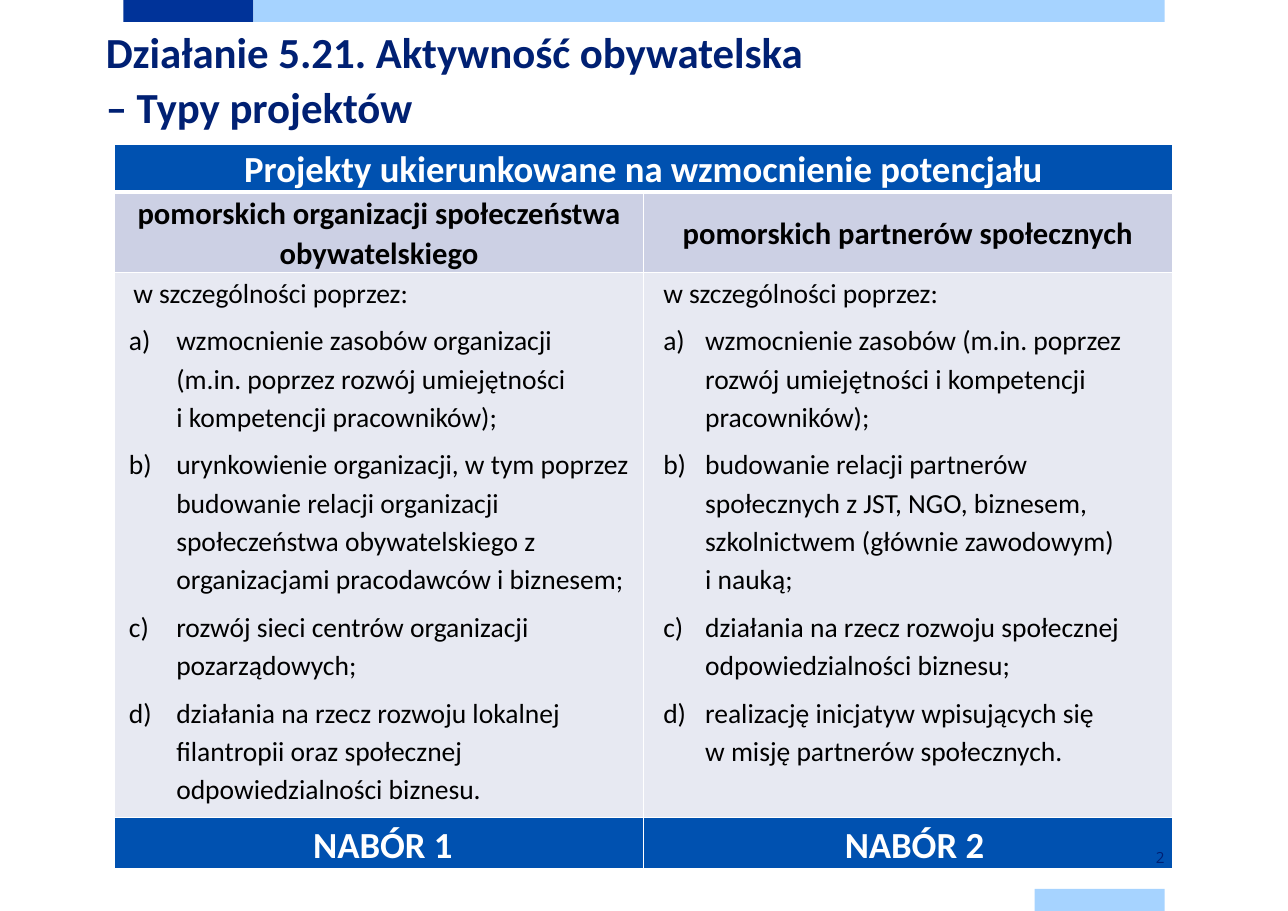
from lxml.etree import SubElement
from pptx import Presentation
from pptx.dml.color import RGBColor
from pptx.enum.shapes import MSO_SHAPE as Shape
from pptx.enum.text import MSO_ANCHOR as Anchor, MSO_AUTO_SIZE as AutoSize, PP_ALIGN as Align
from pptx.oxml.ns import qn
from pptx.util import Inches, Pt

NAVY = RGBColor(0x00, 0x20, 0x73)
DARK_BLUE = RGBColor(0x00, 0x33, 0x99)
BLUE = RGBColor(0x00, 0x51, 0xB0)
SKY = RGBColor(0xA6, 0xD3, 0xFF)
LAVENDER = RGBColor(0xCC, 0xD0, 0xE4)
PALE = RGBColor(0xE7, 0xE9, 0xF2)
WHITE = RGBColor(0xFF, 0xFF, 0xFF)
BLACK = RGBColor(0x00, 0x00, 0x00)

INTRO = "w szczególności poprzez:"
ORGANIZATION_ACTIONS = [
    "wzmocnienie zasobów organizacji\n(m.in. poprzez rozwój umiejętności\ni kompetencji pracowników);",
    "urynkowienie organizacji, w tym poprzez budowanie relacji organizacji społeczeństwa "
    "obywatelskiego z organizacjami pracodawców i biznesem;",
    "rozwój sieci centrów organizacji pozarządowych;",
    "działania na rzecz rozwoju lokalnej filantropii oraz społecznej odpowiedzialności biznesu.",
]
PARTNER_ACTIONS = [
    "wzmocnienie zasobów (m.in. poprzez rozwój umiejętności i kompetencji pracowników);",
    "budowanie relacji partnerów społecznych z JST, NGO, biznesem, "
    "szkolnictwem (głównie zawodowym)\ni nauką;",
    "działania na rzecz rozwoju społecznej odpowiedzialności biznesu;",
    "realizację inicjatyw wpisujących się\nw misję partnerów społecznych.",
]


class Page:
    font = "Calibri"

    def __init__(self, deck):
        self.slide = deck.slides.add_slide(deck.slide_layouts[5])

    def fill_text(self, para, text, size, color, bold=False, font=None):
        para.text = text
        for span in para.runs:
            span.font.name = font or self.font
            span.font.size = Pt(size)
            span.font.bold = bold
            span.font.color.rgb = color

    def bar(self, left, top, width, color):
        bar = self.slide.shapes.add_shape(
            Shape.RECTANGLE, Inches(left), Inches(top), Inches(width), Inches(0.2))
        bar.shadow.inherit = False
        bar.fill.solid()
        bar.fill.fore_color.rgb = color
        bar.line.fill.background()

    def title(self, text):
        title = self.slide.shapes.title
        title.left, title.top = Inches(0.96), Inches(0.2)
        title.width, title.height = Inches(10.24), Inches(1.16)
        frame = title.text_frame
        frame.auto_size = AutoSize.NONE
        frame.vertical_anchor = Anchor.TOP
        frame.margin_left = frame.margin_right = frame.margin_top = frame.margin_bottom = 0
        para = frame.paragraphs[0]
        para.alignment = Align.LEFT
        para.line_spacing = Pt(36)
        self.fill_text(para, text, 28, NAVY, True)

    def table(self, left, top, widths, heights):
        table = self.slide.shapes.add_table(
            len(heights), len(widths), Inches(left), Inches(top),
            Inches(sum(widths)), Inches(sum(heights))).table
        for column, width in zip(table.columns, widths):
            column.width = Inches(width)
        for row, height in zip(table.rows, heights):
            row.height = Inches(height)
        return table

    def style_cell(self, cell, fill, anchor=Anchor.MIDDLE, top_line=1, bottom_line=1):
        cell.margin_left = cell.margin_right = Inches(0.07)
        cell.margin_top = cell.margin_bottom = 0
        cell.vertical_anchor = anchor
        properties = cell._tc.get_or_add_tcPr()
        for side, width in (("L", 1), ("R", 1), ("T", top_line), ("B", bottom_line)):
            line = SubElement(properties, qn(f"a:ln{side}"), w=str(Pt(width)))
            SubElement(SubElement(line, qn("a:solidFill")), qn("a:srgbClr"), val=str(WHITE))
        cell.fill.solid()
        cell.fill.fore_color.rgb = fill

    def indent(self, para, margin, hanging=0):
        para.level = 1
        properties = para._p.get_or_add_pPr()
        properties.set("marL", str(Inches(margin)))
        properties.set("indent", str(Inches(hanging)))
        return properties

    def heading_cell(self, cell, text, size, color, fill, spacing=1.07, margin=0, **lines):
        self.style_cell(cell, fill, **lines)
        para = cell.text_frame.paragraphs[0]
        para.alignment = Align.CENTER
        para.line_spacing = spacing
        if margin:
            self.indent(para, margin)
        self.fill_text(para, text, size, color, True)

    def list_cell(self, cell, items, intro_indent, item_indent):
        self.style_cell(cell, PALE, Anchor.TOP)
        frame = cell.text_frame
        for position, text in enumerate([INTRO] + items):
            para = frame.add_paragraph() if position else frame.paragraphs[0]
            properties = self.indent(para, *(item_indent if position else intro_indent))
            if position:
                SubElement(properties, qn("a:buAutoNum"), type="alphaLcParenR")
            else:
                SubElement(properties, qn("a:buNone"))
            para.alignment = Align.LEFT
            para.line_spacing = 1.14
            para.space_after = Pt(6)
            self.fill_text(para, text, 18, BLACK)

    def number(self, text):
        box = self.slide.shapes.add_textbox(Inches(9.39), Inches(7.68), Inches(1.18), Inches(0.2))
        frame = box.text_frame
        frame.word_wrap = True
        frame.vertical_anchor = Anchor.MIDDLE
        frame.margin_left = frame.margin_right = 0
        frame.margin_top = frame.margin_bottom = Inches(0.08)
        para = frame.paragraphs[0]
        para.alignment = Align.RIGHT
        self.fill_text(para, text, 10, NAVY, font="Open Sans")


def main():
    deck = Presentation()
    deck.slide_width, deck.slide_height = Inches(11.69), Inches(8.27)
    page = Page(deck)
    page.bar(1.12, 0, 1.18, DARK_BLUE)
    page.bar(2.3, 0, 8.27, SKY)
    page.bar(9.39, 8.07, 1.18, SKY)
    page.title("Działanie 5.21. Aktywność obywatelska\n– Typy projektów")

    table = page.table(1.04, 1.31, [4.8, 4.8], [0.43, 0.72, 4.95, 0.46])
    table.cell(0, 0).merge(table.cell(0, 1))
    page.heading_cell(table.cell(0, 0), "Projekty ukierunkowane na wzmocnienie potencjału",
                      24, WHITE, BLUE, bottom_line=3)
    page.style_cell(table.cell(0, 1), BLUE, bottom_line=3)
    columns = [
        ("pomorskich organizacji społeczeństwa obywatelskiego", ORGANIZATION_ACTIONS,
         (0.1, 0), (0.49, -0.43), "NABÓR 1", 0.07),
        ("pomorskich partnerów społecznych", PARTNER_ACTIONS,
         (0.49, -0.38), (0.49, -0.38), "NABÓR 2", 0.12),
    ]
    for index, (group, actions, intro_indent, item_indent, call, margin) in enumerate(columns):
        page.heading_cell(table.cell(1, index), group, 20, BLACK, LAVENDER, top_line=3)
        page.list_cell(table.cell(2, index), actions, intro_indent, item_indent)
        page.heading_cell(table.cell(3, index), call, 24, WHITE, BLUE, 1.14, margin)

    page.number("2")
    deck.save("out.pptx")


if __name__ == "__main__":
    main()
